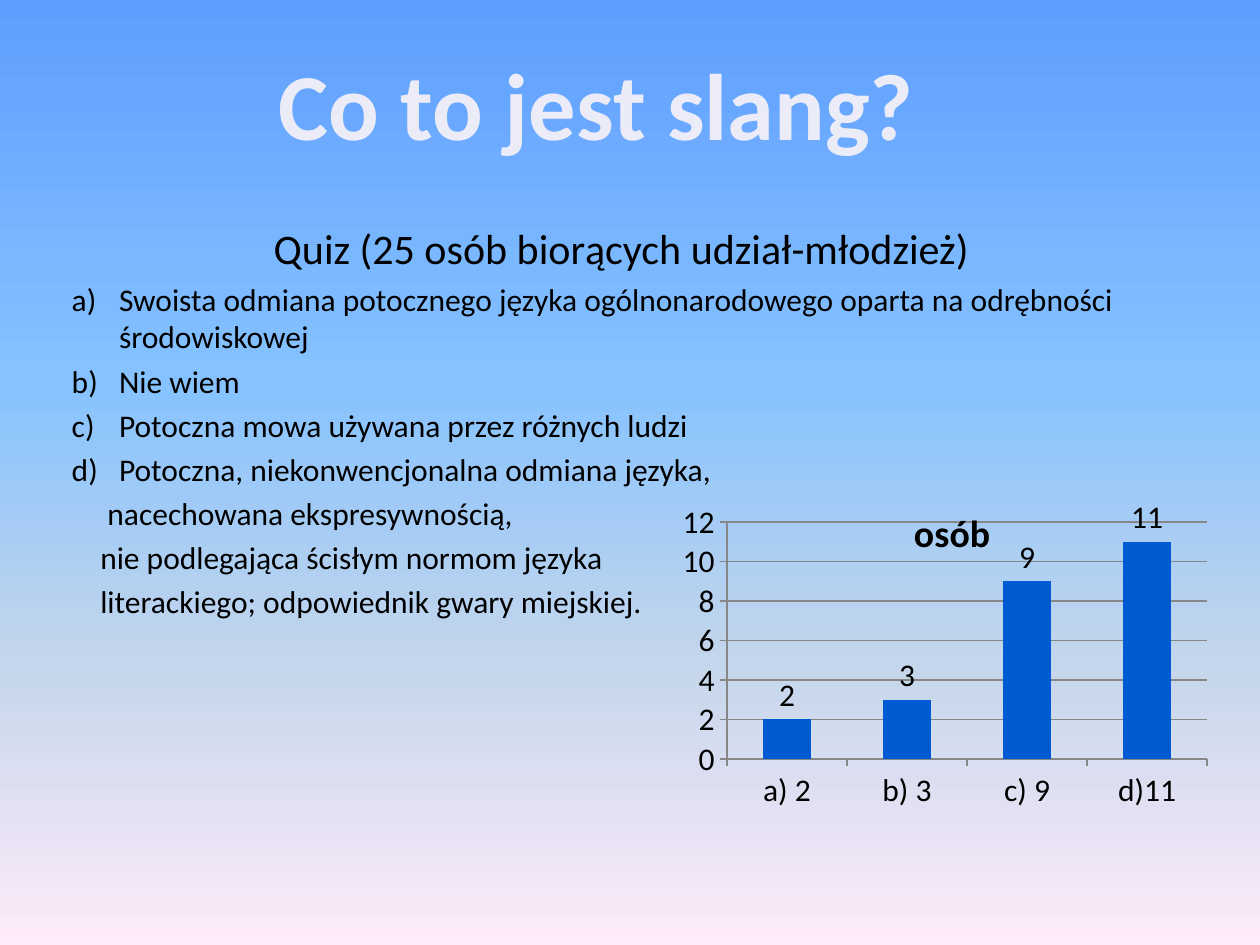
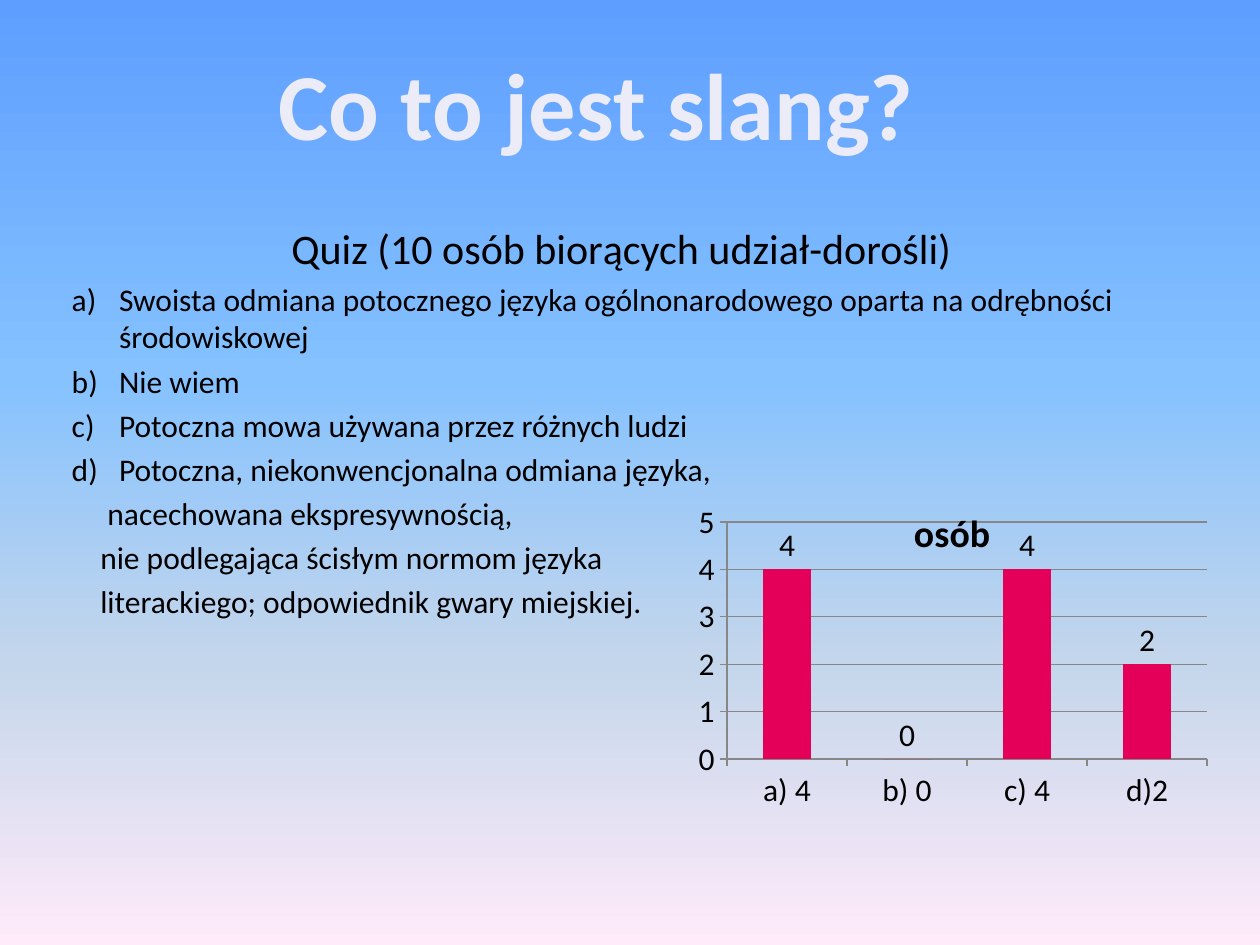
from dataclasses import dataclass
from typing import Optional

import pptx
import pptx.chart.data
import pptx.dml.color
import pptx.enum.chart
import pptx.enum.text
import pptx.oxml
import pptx.oxml.ns
import pptx.util

Pt = pptx.util.Pt
RGBColor = pptx.dml.color.RGBColor

FONT = "Calibri"
BLACK = RGBColor(0x00, 0x00, 0x00)
TITLE_COLOR = RGBColor(0xEB, 0xEC, 0xF7)
AXIS_GRAY = RGBColor(0x87, 0x87, 0x87)
YOUTH_BLUE = RGBColor(0x00, 0x5B, 0xD3)
ADULT_PINK = RGBColor(0xE4, 0x00, 0x59)
SKY_STOPS = (
    (0, RGBColor(0x5E, 0x9E, 0xFF)),
    (40, RGBColor(0x85, 0xC2, 0xFF)),
    (70, RGBColor(0xC4, 0xD6, 0xEB)),
    (100, RGBColor(0xFF, 0xEB, 0xFA)),
)


@dataclass(frozen=True)
class Box:
    left: float
    top: float
    width: float
    height: float


@dataclass(frozen=True)
class Line:
    text: str
    size: float = 18
    margin: float = 27
    indent: float = 0
    level: int = 1
    numbered: bool = False
    alignment: Optional[pptx.enum.text.PP_ALIGN] = None


@dataclass(frozen=True)
class Quiz:
    heading: str
    categories: tuple[str, ...]
    values: tuple[int, ...]
    axis_maximum: int
    axis_step: int
    color: RGBColor


TITLE_BOX = Box(150.5, 22.3, 380.9, 72.7)
BODY_BOX = Box(33.8, 123.8, 648, 356.4)
CHART_BOX = Box(360, 270, 360, 219.6)

TITLE = "Co to jest slang?"
SERIES_NAME = "osób"
ANSWERS = (
    "Swoista odmiana potocznego języka ogólnonarodowego oparta na odrębności środowiskowej",
    "Nie wiem",
    "Potoczna mowa używana przez różnych ludzi",
    "Potoczna, niekonwencjonalna odmiana języka,",
)
ANSWER_LINES = tuple(Line(answer, indent=-27, numbered=True) for answer in ANSWERS) + (
    Line("nacechowana ekspresywnością,", margin=20.4),
    Line("nie podlegająca ścisłym normom języka", margin=16.3),
    Line("literackiego; odpowiednik gwary miejskiej.", margin=16.3),
)

QUIZZES = (
    Quiz("Quiz (25 osób biorących udział-młodzież) ",
         ("a) 2", "b) 3", "c) 9", "d)11"), (2, 3, 9, 11), 12, 2, YOUTH_BLUE),
    Quiz("Quiz (10 osób biorących udział-dorośli) ",
         ("a) 4", "b) 0", "c) 4", "d)2"), (4, 0, 4, 2), 5, 1, ADULT_PINK),
)


def place(shape, box: Box) -> None:
    shape.left, shape.top = Pt(box.left), Pt(box.top)
    shape.width, shape.height = Pt(box.width), Pt(box.height)


def style_font(font, size: float, color: RGBColor = BLACK, bold: bool = False) -> None:
    font.name = FONT
    font.size = Pt(size)
    font.bold = bold
    font.color.rgb = color


def set_master_background(presentation) -> None:
    master = presentation.slide_master
    fill = master.background.fill
    fill.gradient()
    fill.gradient_angle = 270
    stop_list = master.element.find(".//" + pptx.oxml.ns.qn("a:gsLst"))
    for stop in list(stop_list):
        stop_list.remove(stop)
    for position, color in SKY_STOPS:
        stop_list.append(pptx.oxml.parse_xml(
            f'<a:gs {pptx.oxml.ns.nsdecls("a")} pos="{position * 1000}">'
            f'<a:srgbClr val="{color}"/></a:gs>'))


def write_title(slide) -> None:
    title = slide.shapes.title
    place(title, TITLE_BOX)
    frame = title.text_frame
    frame.text = TITLE
    frame.word_wrap = False
    frame.auto_size = pptx.enum.text.MSO_AUTO_SIZE.NONE
    paragraph = frame.paragraphs[0]
    paragraph.alignment = pptx.enum.text.PP_ALIGN.CENTER
    style_font(paragraph.runs[0].font, 54, TITLE_COLOR, True)


def write_line(paragraph, line: Line) -> None:
    paragraph.text = line.text
    paragraph.level = line.level
    paragraph.alignment = line.alignment
    style_font(paragraph.runs[0].font, line.size)
    properties = paragraph._p.get_or_add_pPr()
    properties.set("marL", str(int(Pt(line.margin))))
    properties.set("indent", str(int(Pt(line.indent))))
    bullet = 'buAutoNum type="alphaLcParenR"' if line.numbered else "buNone"
    tag, _, attributes = bullet.partition(" ")
    properties.append(pptx.oxml.parse_xml(
        f'<a:{tag} {pptx.oxml.ns.nsdecls("a")} {attributes}/>'))


def write_body(slide, quiz: Quiz) -> None:
    body = slide.placeholders[1]
    place(body, BODY_BOX)
    frame = body.text_frame
    frame.auto_size = pptx.enum.text.MSO_AUTO_SIZE.NONE
    heading = Line(quiz.heading, size=24, indent=-27, level=0,
                   alignment=pptx.enum.text.PP_ALIGN.CENTER)
    for index, line in enumerate((heading,) + ANSWER_LINES):
        paragraph = frame.add_paragraph() if index else frame.paragraphs[0]
        write_line(paragraph, line)


def set_layout(parent, successor: str, x: float, y: float,
               size: Optional[tuple[float, float]] = None) -> None:
    for layout in parent.findall(pptx.oxml.ns.qn("c:layout")):
        parent.remove(layout)
    values = [("xMode", "edge"), ("yMode", "edge"), ("x", x), ("y", y)]
    if size:
        values = [("layoutTarget", "inner"), *values, ("w", size[0]), ("h", size[1])]
    content = "".join(f'<c:{name} val="{value}"/>' for name, value in values)
    parent.find(pptx.oxml.ns.qn(successor)).addprevious(pptx.oxml.parse_xml(
        f'<c:layout {pptx.oxml.ns.nsdecls("c")}>'
        f'<c:manualLayout>{content}</c:manualLayout></c:layout>'))


def style_axis(axis) -> None:
    axis.major_tick_mark = pptx.enum.chart.XL_TICK_MARK.OUTSIDE
    axis.minor_tick_mark = pptx.enum.chart.XL_TICK_MARK.NONE
    axis.format.line.color.rgb = AXIS_GRAY
    axis.format.line.width = Pt(0.75)
    style_font(axis.tick_labels.font, 18)


def add_quiz_chart(slide, quiz: Quiz) -> None:
    data = pptx.chart.data.CategoryChartData()
    data.categories = quiz.categories
    data.add_series(SERIES_NAME, quiz.values)
    box = CHART_BOX
    chart = slide.shapes.add_chart(
        pptx.enum.chart.XL_CHART_TYPE.COLUMN_CLUSTERED,
        Pt(box.left), Pt(box.top), Pt(box.width), Pt(box.height), data).chart
    style_font(chart.font, 18)
    chart.has_legend = False

    chart.has_title = True
    chart.chart_title.text_frame.text = SERIES_NAME
    style_font(chart.chart_title.text_frame.paragraphs[0].runs[0].font, 21.6, bold=True)
    chart.chart_title.include_in_layout = True
    title_element = chart.chart_title._element
    set_layout(title_element, "c:overlay", 0.44, 0.07)
    plot_area = title_element.getparent().find(pptx.oxml.ns.qn("c:plotArea"))
    set_layout(plot_area, "c:barChart", 0.154, 0.129, (0.762, 0.617))

    style_axis(chart.category_axis)
    value_axis = chart.value_axis
    style_axis(value_axis)
    value_axis.minimum_scale = 0
    value_axis.maximum_scale = quiz.axis_maximum
    value_axis.major_unit = quiz.axis_step
    value_axis.major_gridlines.format.line.color.rgb = AXIS_GRAY
    value_axis.major_gridlines.format.line.width = Pt(0.75)

    plot = chart.plots[0]
    plot.vary_by_categories = False
    plot.gap_width = 150
    fill = plot.series[0].format.fill
    fill.solid()
    fill.fore_color.rgb = quiz.color
    plot.has_data_labels = True
    labels = plot.data_labels
    labels.show_value = True
    labels.position = pptx.enum.chart.XL_LABEL_POSITION.OUTSIDE_END
    style_font(labels.font, 18)


def main() -> None:
    presentation = pptx.Presentation()
    presentation.slide_width, presentation.slide_height = Pt(720), Pt(540)
    set_master_background(presentation)
    for quiz in QUIZZES:
        slide = presentation.slides.add_slide(presentation.slide_layouts[1])
        write_title(slide)
        write_body(slide, quiz)
        add_quiz_chart(slide, quiz)
    presentation.save("out.pptx")


if __name__ == "__main__":
    main()
